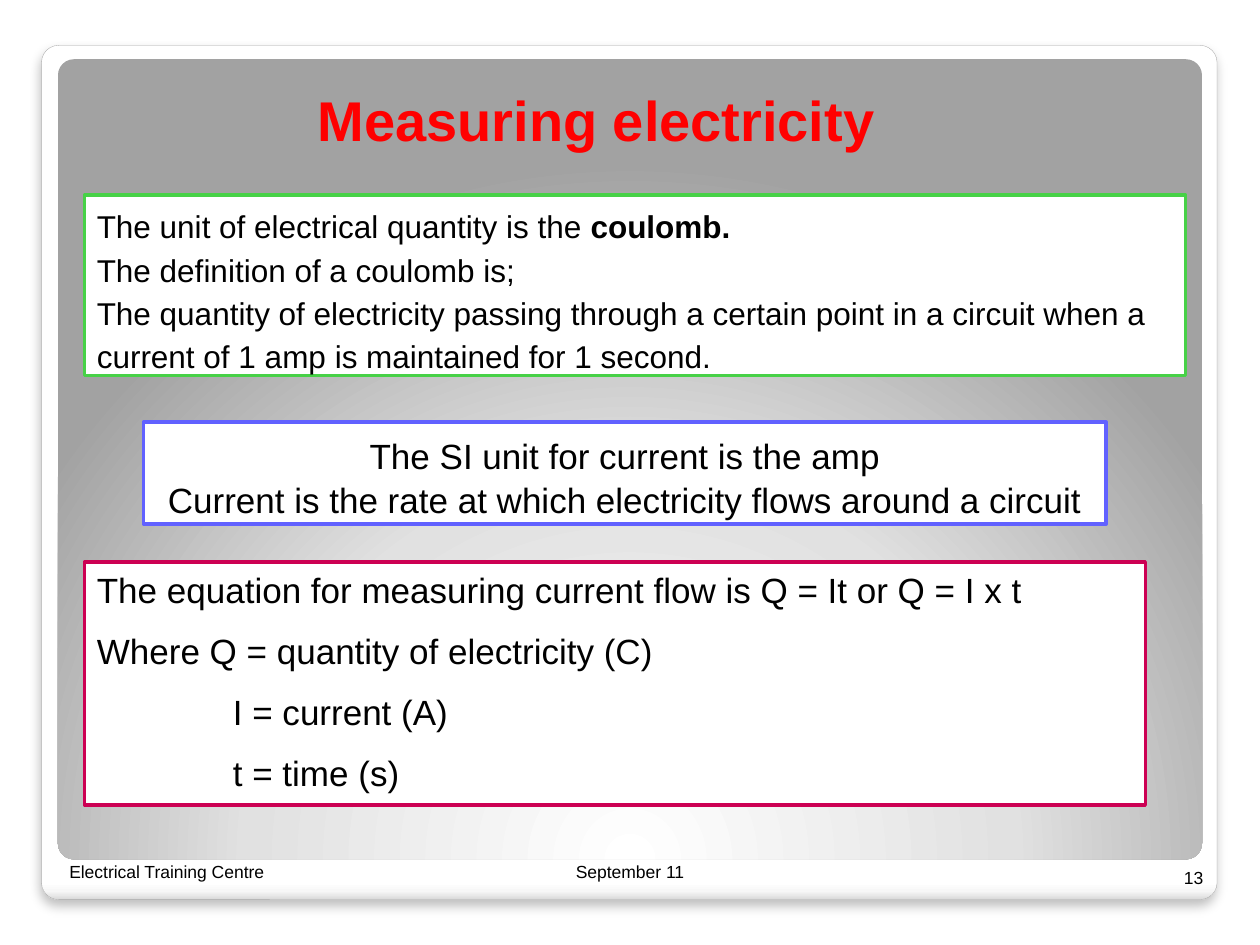
"""Build the slide on measuring electricity: a framed panel, three text boxes and a footer."""
import pptx
import pptx.dml.color
import pptx.enum.shapes
import pptx.enum.text
import pptx.oxml
import pptx.oxml.ns
import pptx.util

ALIGN = pptx.enum.text.PP_ALIGN
ANCHOR = pptx.enum.text.MSO_ANCHOR
SHAPE = pptx.enum.shapes.MSO_SHAPE
Pt = pptx.util.Pt


def rgb(code):
    return pptx.dml.color.RGBColor.from_string(code)


def write(frame, paragraphs, size, align=ALIGN.LEFT, color="000000"):
    frame.word_wrap = True
    for index, (runs, before, spacing, indent) in enumerate(paragraphs):
        paragraph = frame.add_paragraph() if index else frame.paragraphs[0]
        paragraph.alignment = align
        paragraph.space_before = Pt(before)
        paragraph.line_spacing = spacing
        if indent:
            paragraph._p.get_or_add_pPr().set("marL", str(pptx.util.Inches(indent)))
        for words, bold in runs:
            run = paragraph.add_run()
            run.text = words
            run.font.name = "Arial"
            run.font.size = Pt(size)
            run.font.bold = bold
            run.font.color.rgb = rgb(color)


deck = pptx.Presentation()
deck.slide_width = pptx.util.Inches(10)
deck.slide_height = pptx.util.Inches(7.5)
column = deck.slide_width // 100
row = deck.slide_height // 75
slide = deck.slides.add_slide(deck.slide_layouts[5])
heading = slide.shapes.title

panels = [
    ((3.3, 3.6, 93.3, 67.8), [(0, "FFFFFF"), (98, "FFFFFF"), (99, "F7F7F7"), (100, "DADADA")],
     '<a:lin ang="5400000" scaled="0"/>'),
    ((4.6, 4.7, 90.8, 63.5), [(0, "FFFFFF"), (55, "E1E1E1"), (100, "A2A2A2")],
     '<a:path path="circle"><a:fillToRect l="50000" t="175000" r="50000" b="-75000"/></a:path>'),
]
namespace = pptx.oxml.ns.nsdecls("a")
for (left, top, width, height), stops, direction in panels:
    panel = slide.shapes.add_shape(
        SHAPE.ROUNDED_RECTANGLE,
        int(left * column), int(top * row), int(width * column), int(height * row))
    panel.adjustments[0] = 0.02
    panel.shadow.inherit = False
    panel.line.fill.background()
    colors = "".join(
        f'<a:gs pos="{share * 1000}"><a:srgbClr val="{code}"/></a:gs>' for share, code in stops)
    gradient = pptx.oxml.parse_xml(
        f'<a:gradFill {namespace} rotWithShape="1"><a:gsLst>{colors}</a:gsLst>{direction}</a:gradFill>')
    panel._element.spPr.find(pptx.oxml.ns.qn("a:prstGeom")).addnext(gradient)

frame_panel = slide.shapes[1]
frame_panel.line.color.rgb = rgb("A4A4A4")
frame_panel.line.width = Pt(0.16)
effects = frame_panel._element.spPr.find(pptx.oxml.ns.qn("a:effectLst"))
effects.append(pptx.oxml.parse_xml(
    f'<a:outerShdw {namespace} blurRad="{Pt(6)}" dist="{Pt(4)}" dir="5400000" algn="t" rotWithShape="0">'
    '<a:srgbClr val="000000"><a:alpha val="25000"/></a:srgbClr></a:outerShdw>'))

heading.left, heading.top = int(24.4 * column), int(6.1 * row)
heading.width, heading.height = int(51.2 * column), int(6.4 * row)
heading.element.getparent().append(heading.element)
heading.text_frame.vertical_anchor = ANCHOR.BOTTOM
heading.text_frame.margin_left = heading.text_frame.margin_right = pptx.util.Inches(0.08)
heading.text_frame.margin_top = heading.text_frame.margin_bottom = pptx.util.Inches(0.04)
write(heading.text_frame, [([("Measuring electricity", True)], 0, 1.0, 0)], 32, color="FF0000")

equation = [
    ([("The equation for measuring current flow is Q = It or Q = I x t", False)], 0, 1.0, 0),
    ([("Where Q = quantity of electricity (C)", False)], 11, 1.0, 0),
    ([("I = current (A)", False)], 11, 1.0, 1.08),
    ([("t = time (s)", False)], 11, 1.0, 1.08),
]
current = [
    ([("The SI unit for current is the amp", False)], 0, 1.15, 0),
    ([("Current is the rate at which electricity flows around a circuit", False)], 0, 1.05, 0),
]
coulomb = [
    ([("The unit of electrical quantity is the ", False), ("coulomb.", True)], 0, 1.15, 0),
    ([("The definition of a coulomb is;", False)], 0, 1.15, 0),
    ([("The quantity of electricity passing through a certain point in a circuit when a "
       "current of 1 amp is maintained for 1 second.", False)], 0, 1.15, 0),
]
boxes = [
    ((6.7, 44.6, 84.2, 19.3), "CC0053", equation, 20, ALIGN.LEFT),
    ((11.4, 33.5, 76.4, 8.1), "6161FF", current, 20, ALIGN.CENTER),
    ((6.7, 15.5, 87.4, 14.3), "47D147", coulomb, 18, ALIGN.LEFT),
]
for (left, top, width, height), border, paragraphs, size, align in boxes:
    box = slide.shapes.add_shape(
        SHAPE.RECTANGLE,
        int(left * column), int(top * row), int(width * column), int(height * row))
    box.shadow.inherit = False
    box.fill.solid()
    box.fill.fore_color.rgb = rgb("FFFFFF")
    box.line.color.rgb = rgb(border)
    box.line.width = Pt(2)
    box.text_frame.vertical_anchor = ANCHOR.TOP
    write(box.text_frame, paragraphs, size, align)

footers = [
    (4.7, 67.9, 25, "Electrical Training Centre", ALIGN.LEFT),
    (37.5, 67.9, 25, "September 11", ALIGN.CENTER),
    (91.3, 68.4, 5, "13", ALIGN.RIGHT),
]
for left, top, width, words, align in footers:
    footer = slide.shapes.add_textbox(
        int(left * column), int(top * row), width * column, int(2.5 * row)).text_frame
    footer.vertical_anchor = ANCHOR.BOTTOM
    footer.margin_left = footer.margin_right = pptx.util.Inches(0.08)
    footer.margin_top = footer.margin_bottom = pptx.util.Inches(0.04)
    write(footer, [([(words, False)], 0, 1.0, 0)], 10, align)

deck.save("out.pptx")
